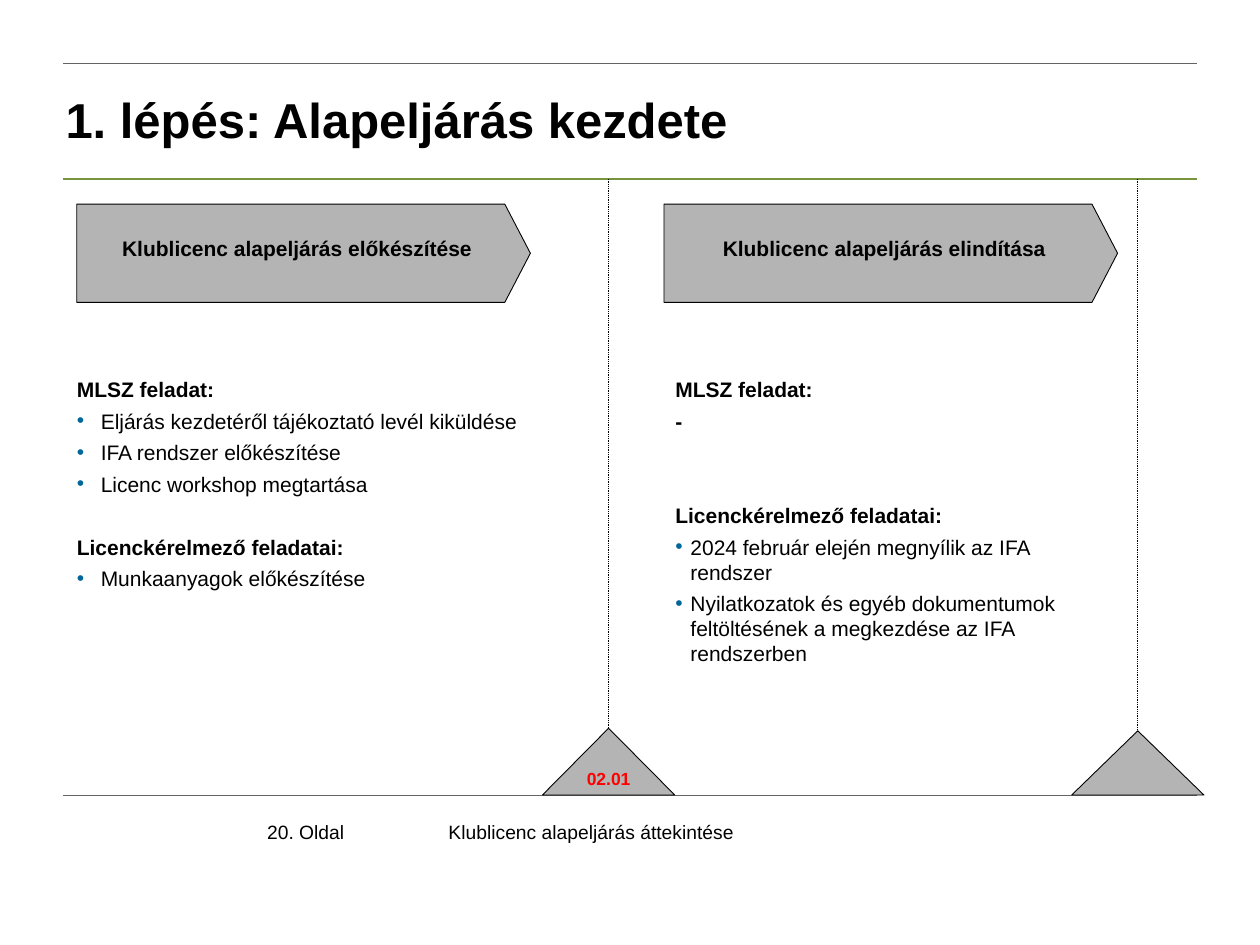
from lxml.etree import SubElement
from pptx import Presentation
from pptx.dml.color import RGBColor
from pptx.enum.dml import MSO_LINE
from pptx.enum.shapes import MSO_CONNECTOR, MSO_SHAPE
from pptx.enum.text import MSO_ANCHOR, MSO_AUTO_SIZE, PP_ALIGN
from pptx.oxml.ns import qn
from pptx.util import Inches, Pt

COLORS = {"ink": "000000", "gray": "B4B4B4", "rule": "646464",
          "green": "77933C", "blue": "006699", "red": "FF0000"}
COLS, ROWS = 100, 75
TOP, BASE = 14.2, 63.1


def tint(name):
    return RGBColor.from_string(COLORS[name])


def write(par, text, size=12, bold=False, color="ink", align=PP_ALIGN.LEFT):
    par.alignment = align
    run = par.add_run()
    run.text = text
    font = run.font
    font.name, font.size, font.bold = "Arial", Pt(size), bold
    font.color.rgb = tint(color)


def mark(par, indent):
    """Give the paragraph a blue bullet, or none when indent is 0."""
    props = par._p.get_or_add_pPr()
    props.set("marL", str(Inches(indent)))
    props.set("indent", str(-Inches(indent)))
    if not indent:
        SubElement(props, qn("a:buNone"))
        return
    hue = SubElement(props, qn("a:buClr"))
    SubElement(hue, qn("a:srgbClr"), val=COLORS["blue"])
    SubElement(props, qn("a:buFont"), typeface="Arial")
    SubElement(props, qn("a:buChar"), char="•")


class Page:
    """Places styled elements on a grid of 100 columns and 75 rows."""

    def __init__(self, deck):
        self.col = deck.slide_width / COLS
        self.row = deck.slide_height / ROWS
        self.slide = deck.slides.add_slide(deck.slide_layouts[3])
        self.shapes = self.slide.shapes

    def area(self, x, y, w, h):
        return (round(x * self.col), round(y * self.row),
                round(w * self.col), round(h * self.row))

    def frame(self, shape, pad=0, anchor=MSO_ANCHOR.TOP):
        frame = shape.text_frame
        frame.word_wrap = True
        frame.auto_size = MSO_AUTO_SIZE.NONE
        frame.vertical_anchor = anchor
        frame.margin_left = frame.margin_right = Inches(pad)
        frame.margin_top = frame.margin_bottom = Inches(pad)
        return frame

    def move(self, shape, box):
        shape.left, shape.top, shape.width, shape.height = self.area(*box)

    def title(self, text, box):
        shape = self.shapes.title
        self.move(shape, box)
        frame = self.frame(shape, 0.1, MSO_ANCHOR.MIDDLE)
        write(frame.paragraphs[0], text, size=28, bold=True)

    def tasks(self, slot, box, items):
        """Fill a body placeholder with (text, bold, indent, gap) items."""
        shape = self.slide.placeholders[slot]
        self.move(shape, box)
        frame = self.frame(shape)
        for i, (text, bold, indent, gap) in enumerate(items):
            par = frame.add_paragraph() if i else frame.paragraphs[0]
            mark(par, indent)
            par.line_spacing = Pt(14.3)
            par.space_before, par.space_after = Pt(gap), Pt(3.7)
            write(par, text, bold=bold)

    def label(self, text, box):
        shape = self.shapes.add_textbox(*self.area(*box))
        write(self.frame(shape).paragraphs[0], text, size=11)

    def line(self, x, y, end, color, width, dash=None):
        start = self.area(x, y, *end)
        line = self.shapes.add_connector(MSO_CONNECTOR.STRAIGHT, *start)
        line.line.color.rgb = tint(color)
        line.line.width = Pt(width)
        if dash:
            line.line.dash_style = dash
        SubElement(line._element.spPr, qn("a:effectLst"))
        return line

    def block(self, kind, box):
        shape = self.shapes.add_shape(kind, *self.area(*box))
        shape.shadow.inherit = False
        shape.fill.solid()
        shape.fill.fore_color.rgb = tint("gray")
        shape.line.color.rgb = tint("ink")
        shape.line.width = Pt(0.5)
        return shape

    def phase(self, text, x):
        shape = self.block(MSO_SHAPE.PENTAGON, (x, 16.2, 36, 7.8))
        shape.adjustments[0] = 0.26
        frame = self.frame(shape, 0.05)
        frame.margin_top = Inches(0.25)
        write(frame.paragraphs[0], text, bold=True, align=PP_ALIGN.CENTER)

    def date(self, mid, peak, text=""):
        """Draw a triangle on the base line, hung from a dotted line."""
        wide = 10.5
        box = (mid - wide / 2, peak, wide, BASE - peak)
        shape = self.block(MSO_SHAPE.ISOSCELES_TRIANGLE, box)
        line = self.line(mid, TOP, (mid, peak), "ink", 0.5, MSO_LINE.ROUND_DOT)
        line.end_connect(shape, 0)
        if text:
            frame = self.frame(shape, 0, MSO_ANCHOR.MIDDLE)
            write(frame.paragraphs[0], text, size=10, bold=True,
                  color="red", align=PP_ALIGN.CENTER)


def main():
    deck = Presentation()
    deck.slide_width, deck.slide_height = Inches(10), Inches(7.5)
    page = Page(deck)
    for y, color, width in ((5, "rule", 0.5), (TOP, "green", 1),
                            (BASE, "rule", 0.25)):
        page.line(5, y, (95, y), color, width)
    page.label("20. Oldal", (21.2, 65.1, 7.3, 2.2))
    page.label("Klublicenc alapeljárás áttekintése", (35.6, 65.1, 34.3, 2.2))
    page.title("1. lépés: Alapeljárás kezdete", (4.2, 6.6, 90.8, 5.7))
    page.tasks(1, (6.1, 29.9, 36, 24.7), [
        ("MLSZ feladat:", True, 0, 0),
        ("Eljárás kezdetéről tájékoztató levél kiküldése", False, 0.19, 0),
        ("IFA rendszer előkészítése", False, 0.19, 0),
        ("Licenc workshop megtartása", False, 0.19, 0),
        ("Licenckérelmező feladatai:", True, 0, 18),
        ("Munkaanyagok előkészítése", False, 0.19, 0),
    ])
    page.tasks(2, (53.6, 29.9, 33.4, 24.7), [
        ("MLSZ feladat:", True, 0, 0),
        ("-", True, 0, 0),
        ("Licenckérelmező feladatai:", True, 0, 36),
        ("2024 február elején megnyílik az IFA rendszer", False, 0.12, 0),
        ("Nyilatkozatok és egyéb dokumentumok feltöltésének a megkezdése "
         "az IFA rendszerben", False, 0.12, 0),
    ])
    page.date(48.3, 57.8, "02.01")
    page.date(90.3, 58)
    page.phase("Klublicenc alapeljárás előkészítése", 6.1)
    page.phase("Klublicenc alapeljárás elindítása", 52.7)
    deck.save("out.pptx")


if __name__ == "__main__":
    main()
